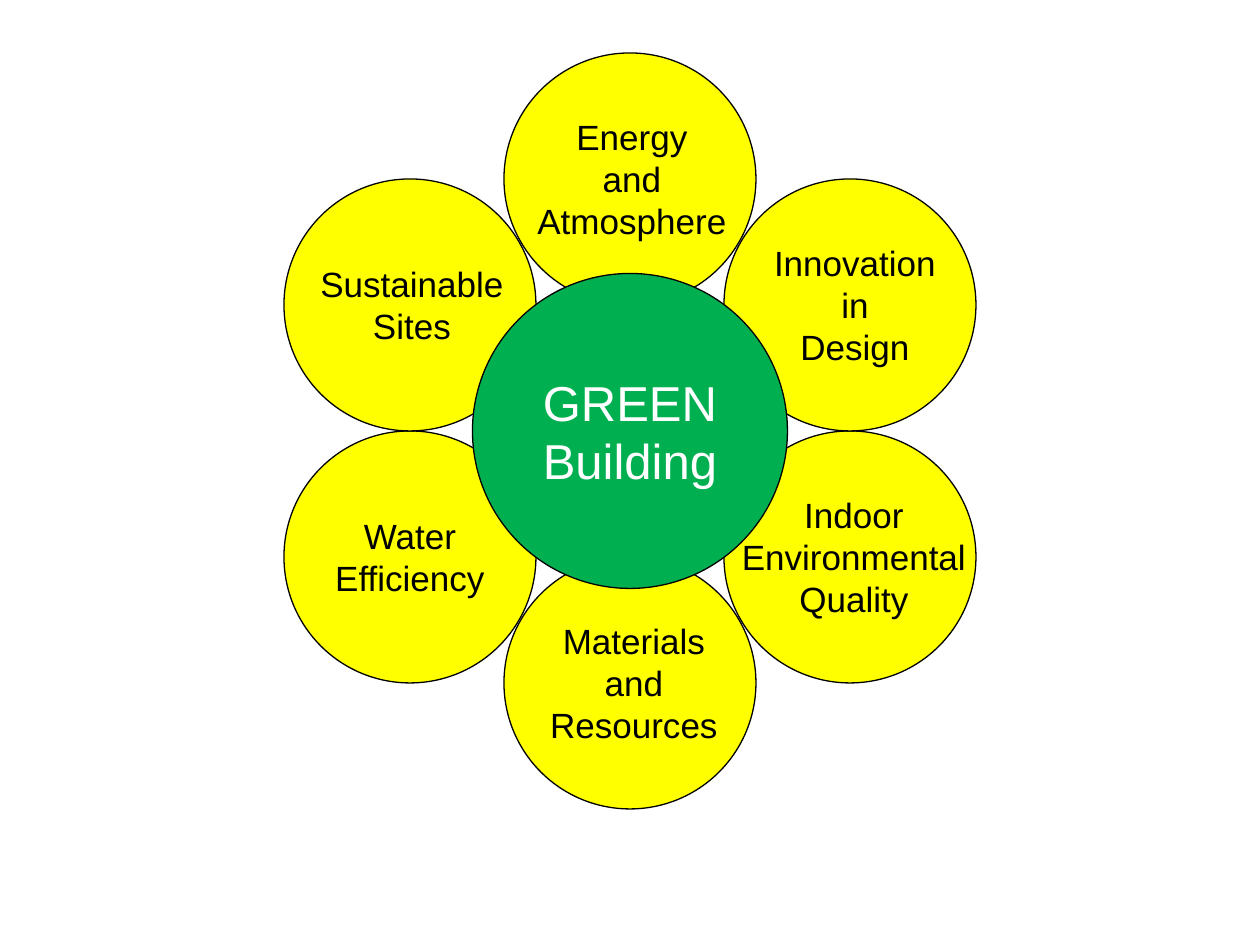
import pptx
import pptx.dml.color
import pptx.enum.shapes
import pptx.enum.text
import pptx.util

EMU_PER_PX = 914400 / 126
COLOURS = {"petal": "FFFF00", "hub": "00B050", "dark": "000000", "light": "FFFFFF"}
CENTRE_X, CENTRE_Y = 630, 431
COLUMN_STEP, ROW_STEP = 220, 126
PETAL_SIZE, HUB_SIZE = 252, 315

# column, row, lines, shift of the text to the right in px
PETALS = [
    (1, 1, ["Indoor", "Environmental", "Quality"], 4),
    (1, -1, ["Innovation", "in", "Design"], 5),
    (0, 2, ["Materials", "and", "Resources"], 4),
    (-1, 1, ["Water", "Efficiency"], 0),
    (-1, -1, ["Sustainable", "Sites"], 2),
    (0, -2, ["Energy", "and", "Atmosphere"], 2),
]


def px(length):
    return pptx.util.Emu(round(length * EMU_PER_PX))


def colour(name):
    return pptx.dml.color.RGBColor.from_string(COLOURS[name])


class Flower:
    font = "Arial"
    inset = 12

    def __init__(self, slide):
        self.slide = slide

    def circle(self, x, y, size, fill, lines, points, ink, wrap=False, shift=0):
        """Draw a labelled circle centred on x, y."""
        circle = self.slide.shapes.add_shape(
            pptx.enum.shapes.MSO_SHAPE.OVAL,
            px(x - size / 2), px(y - size / 2), px(size), px(size))
        circle.shadow.inherit = False
        circle.fill.solid()
        circle.fill.fore_color.rgb = colour(fill)
        circle.line.color.rgb = colour("dark")
        circle.line.width = pptx.util.Pt(0.75)
        self.label(circle.text_frame, lines, points, ink, wrap, shift)

    def label(self, box, lines, points, ink, wrap, shift):
        box.word_wrap = wrap
        box.vertical_anchor = pptx.enum.text.MSO_ANCHOR.MIDDLE
        box.margin_left = px(self.inset + 2 * shift)
        box.margin_right = px(self.inset)
        for index, line in enumerate(lines):
            para = box.add_paragraph() if index else box.paragraphs[0]
            para.alignment = pptx.enum.text.PP_ALIGN.CENTER
            span = para.add_run()
            span.text = line
            span.font.name = self.font
            span.font.size = pptx.util.Pt(points)
            span.font.color.rgb = colour(ink)

    def petal(self, column, row, lines, shift):
        self.circle(CENTRE_X + column * COLUMN_STEP, CENTRE_Y + row * ROW_STEP,
                    PETAL_SIZE, "petal", lines, 20, "dark", shift=shift)

    def hub(self, text):
        self.circle(CENTRE_X, CENTRE_Y, HUB_SIZE, "hub", [text], 28, "light", wrap=True)


def main():
    deck = pptx.Presentation()
    deck.slide_width, deck.slide_height = px(1260), px(945)
    flower = Flower(deck.slides.add_slide(deck.slide_layouts[6]))
    for petal in PETALS:
        flower.petal(*petal)
    flower.hub("GREEN Building")
    deck.save("out.pptx")


if __name__ == "__main__":
    main()
